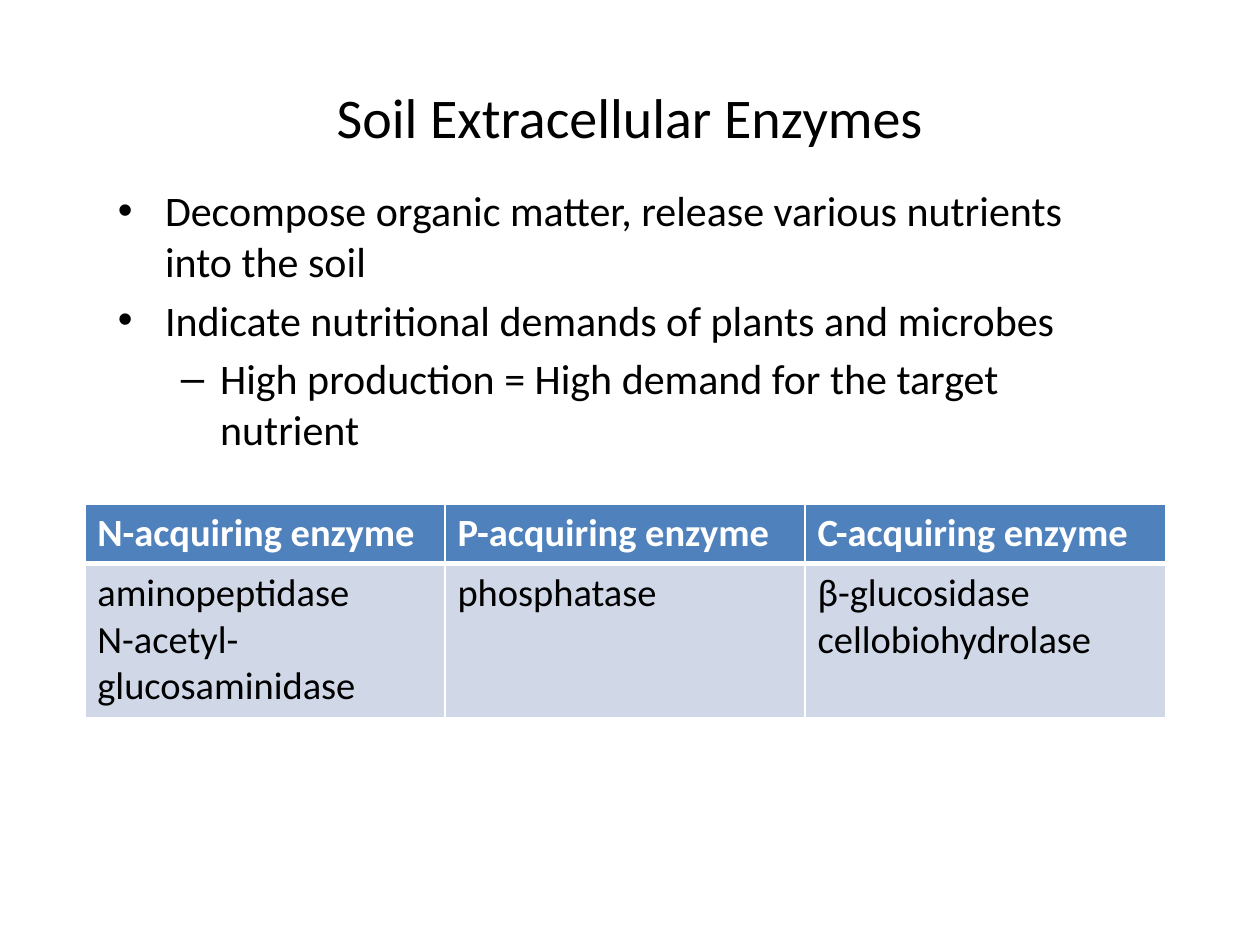
from lxml.etree import SubElement
from pptx import Presentation
from pptx.dml.color import RGBColor
from pptx.enum.text import MSO_ANCHOR, PP_ALIGN
from pptx.oxml.ns import qn
from pptx.util import Cm, Pt

# Content
TITLE = "Soil Extracellular Enzymes"
BULLETS = [
    (0, "Decompose organic matter, release various nutrients into the soil"),
    (0, "Indicate nutritional demands of plants and microbes"),
    (1, "High production = High demand for the target nutrient"),
]
ENZYMES = {
    "N-acquiring enzyme": ["aminopeptidase", "N-acetyl-glucosaminidase"],
    "P-acquiring enzyme": ["phosphatase"],
    "C-acquiring enzyme": ["β-glucosidase", "cellobiohydrolase"],
}

# Format
BLACK = RGBColor(0x00, 0x00, 0x00)
WHITE = RGBColor(0xFF, 0xFF, 0xFF)
BLUE = RGBColor(0x4F, 0x81, 0xBD)
PALE = RGBColor(0xD0, 0xD8, 0xE8)
TITLE_FONT = {"name": "Calibri", "size": Pt(32)}
BODY_FONT = {"name": "Calibri", "size": Pt(24)}
HEAD_FONT = {"name": "Calibri", "size": Pt(22), "bold": True}
CELL_FONT = {"name": "Calibri", "size": Pt(22), "bold": False}
ROW_HEIGHTS = [Cm(1.14), Cm(3.1)]
COL_WIDTH = Cm(7.26)


def place(shape, left, top, width, height):
    box = {"left": left, "top": top, "width": width, "height": height}
    for key, value in box.items():
        setattr(shape, key, Cm(value))


def add_text(p, text, font, color):
    r = p.add_run()
    r.text = text
    for key, value in font.items():
        setattr(r.font, key, value)
    r.font.color.rgb = color


def set_borders(cell, widths):
    """Draw white cell borders; they must precede the fill in the XML."""
    tc_pr = cell._tc.get_or_add_tcPr()
    for side, width in widths.items():
        ln = SubElement(tc_pr, qn(f"a:ln{side}"), w=str(Pt(width)))
        fill = SubElement(ln, qn("a:solidFill"))
        SubElement(fill, qn("a:srgbClr"), val=str(WHITE))


def fill_cell(cell, lines, font, color, fill, widths):
    set_borders(cell, widths)
    cell.fill.solid()
    cell.fill.fore_color.rgb = fill
    tf = cell.text_frame
    for i, line in enumerate(lines):
        p = tf.add_paragraph() if i else tf.paragraphs[0]
        add_text(p, line, font, color)


prs = Presentation()
prs.slide_width, prs.slide_height = Cm(25.4), Cm(19.05)
s = prs.slides.add_slide(prs.slide_layouts[1])

# Title
title = s.shapes.title
place(title, 1.27, 0.76, 22.86, 3.18)
title.text_frame.vertical_anchor = MSO_ANCHOR.MIDDLE
p = title.text_frame.paragraphs[0]
p.alignment = PP_ALIGN.CENTER
add_text(p, TITLE, TITLE_FONT, BLACK)

# Bullet list
body = s.placeholders[1]
place(body, 2.12, 3.6, 20.32, 14.18)
tf = body.text_frame
for i, (level, text) in enumerate(BULLETS):
    p = tf.add_paragraph() if i else tf.paragraphs[0]
    p.level = level
    add_text(p, text, BODY_FONT, BLACK)

# Enzyme table
table = s.shapes.add_table(2, len(ENZYMES), Cm(1.71), Cm(10.16),
                           COL_WIDTH * len(ENZYMES), sum(ROW_HEIGHTS)).table
for row, height in zip(table.rows, ROW_HEIGHTS):
    row.height = height
for col, (heading, names) in enumerate(ENZYMES.items()):
    table.columns[col].width = COL_WIDTH
    fill_cell(table.cell(0, col), [heading], HEAD_FONT, WHITE, BLUE,
              {"L": 1, "R": 1, "T": 1, "B": 3})
    fill_cell(table.cell(1, col), names, CELL_FONT, BLACK, PALE,
              {"L": 1, "R": 1, "T": 3, "B": 1})

prs.save("out.pptx")
